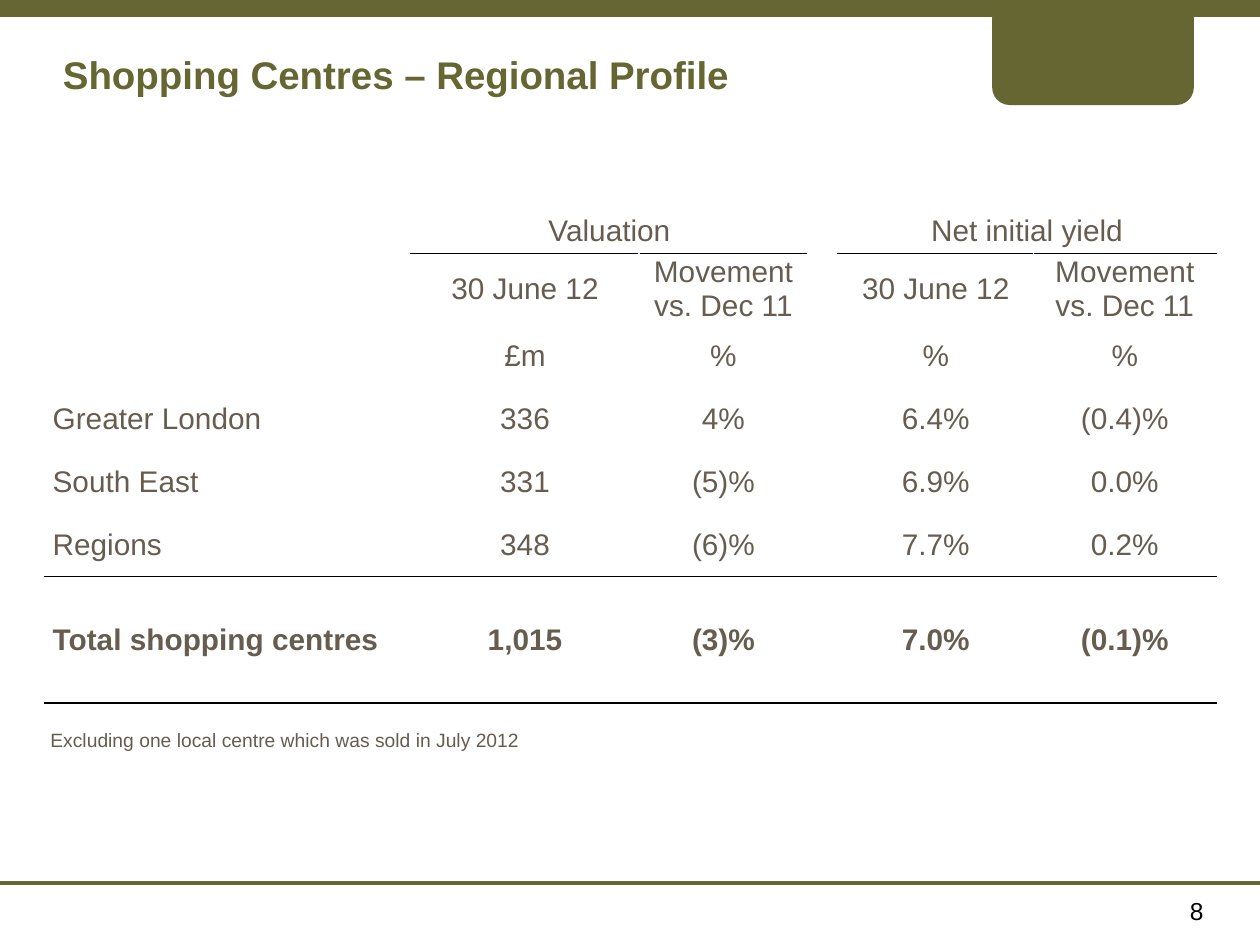
from lxml.etree import SubElement
from pptx import Presentation
from pptx.dml.color import RGBColor
from pptx.enum.shapes import MSO_CONNECTOR, MSO_SHAPE
from pptx.enum.text import MSO_ANCHOR, PP_ALIGN
from pptx.oxml.ns import qn
from pptx.util import Pt

OLIVE, TAUPE, BLACK = "666633", "665C4F", "000000"
COLUMN_WIDTHS = [209.5, 130.3, 96.5, 17.3, 111.6, 104.4]
ROW_HEIGHTS = [26, 37.4, 36, 36, 36, 36, 72]
GAP_COLUMN = 3
REGIONAL_PROFILE = [
    ["", "Valuation", "", "", "Net initial yield", ""],
    ["", "30 June 12", "Movement vs. Dec 11", "", "30 June 12", "Movement vs. Dec 11"],
    ["", "£m", "%", "", "%", "%"],
    ["Greater London", "336", "4%", "", "6.4%", "(0.4)%"],
    ["South East", "331", "(5)%", "", "6.9%", "0.0%"],
    ["Regions", "348", "(6)%", "", "7.7%", "0.2%"],
    ["Total shopping centres", "1,015", "(3)%", "", "7.0%", "(0.1)%"],
]


def rgb(value):
    return RGBColor.from_string(value)


def style(paragraph, size, color, bold=False, align=PP_ALIGN.LEFT):
    paragraph.alignment = align
    font = paragraph.font
    font.name, font.size, font.bold = "Arial", Pt(size), bold
    font.color.rgb = rgb(color)


def add_rule(slide, y, weight):
    rule = slide.shapes.add_connector(MSO_CONNECTOR.STRAIGHT, 0, Pt(y), Pt(720), Pt(y))
    rule.line.color.rgb = rgb(OLIVE)
    rule.line.width = Pt(weight)
    SubElement(rule._element.spPr, qn("a:effectLst"))


def add_corner_tab(slide):
    tab = slide.shapes.add_shape(
        MSO_SHAPE.ROUNDED_RECTANGLE, Pt(567), 0, Pt(115.2), Pt(60))
    tab.shadow.inherit = False
    tab.fill.solid()
    tab.fill.fore_color.rgb = rgb(OLIVE)
    tab.line.fill.background()


def add_text(slide, text, box, margins, size, color, anchor=MSO_ANCHOR.TOP, **looks):
    frame = slide.shapes.add_textbox(*map(Pt, box)).text_frame
    frame.word_wrap = True
    frame.vertical_anchor = anchor
    (frame.margin_left, frame.margin_top,
     frame.margin_right, frame.margin_bottom) = map(Pt, margins)
    frame.text = text
    style(frame.paragraphs[0], size, color, **looks)


def add_border(cell, side, weight):
    properties = cell._tc.get_or_add_tcPr()
    border = properties.makeelement(qn(f"a:{side}"), {"w": str(Pt(weight))})
    fill = SubElement(border, qn("a:solidFill"))
    SubElement(fill, qn("a:srgbClr"), val=BLACK)
    position = sum(child.tag == qn("a:lnT") for child in properties)
    properties.insert(position, border)


def rule_below(table, row, columns, weight):
    for column in columns:
        add_border(table.cell(row, column), "lnB", weight)
        if row + 1 < len(ROW_HEIGHTS):
            add_border(table.cell(row + 1, column), "lnT", weight)


def fill_cell(cell, text, is_label, is_total):
    cell.fill.background()
    cell.vertical_anchor = MSO_ANCHOR.MIDDLE
    cell.margin_left = Pt(4.7 if is_label else 0)
    cell.margin_right = cell.margin_top = cell.margin_bottom = 0
    cell.text = text
    style(cell.text_frame.paragraphs[0], 17, TAUPE, bold=is_total,
          align=PP_ALIGN.LEFT if is_label else PP_ALIGN.CENTER)


def add_profile_table(slide):
    table = slide.shapes.add_table(
        len(ROW_HEIGHTS), len(COLUMN_WIDTHS), Pt(25.4), Pt(118.8),
        Pt(sum(COLUMN_WIDTHS)), Pt(sum(ROW_HEIGHTS))).table
    table.first_row = table.horz_banding = False
    for column, width in zip(table.columns, COLUMN_WIDTHS):
        column.width = Pt(width)
    for row, height in zip(table.rows, ROW_HEIGHTS):
        row.height = Pt(height)
    total_row = len(ROW_HEIGHTS) - 1
    for r, values in enumerate(REGIONAL_PROFILE):
        for c, value in enumerate(values):
            fill_cell(table.cell(r, c), value, c == 0, r == total_row)
    for first in (1, GAP_COLUMN + 1):
        table.cell(0, first).merge(table.cell(0, first + 1))
        rule_below(table, 0, (first, first + 1), 1)
    all_columns = range(len(COLUMN_WIDTHS))
    rule_below(table, total_row - 1, all_columns, 0.75)
    rule_below(table, total_row, all_columns, 1)


def main():
    deck = Presentation()
    deck.slide_width, deck.slide_height = Pt(720), Pt(540)
    slide = deck.slides.add_slide(deck.slide_layouts[6])
    add_rule(slide, 504.7, 2)
    add_corner_tab(slide)
    add_rule(slide, 4.5, 10)
    add_text(slide, "8", (597.6, 508.3, 97.2, 25.9), (7.2, 3.6, 7.2, 3.6),
             14, BLACK, align=PP_ALIGN.RIGHT)
    add_text(slide, "Shopping Centres – Regional Profile", (36, 21.6, 522.7, 41.8),
             (0, 0, 2.9, 0), 22, OLIVE, anchor=MSO_ANCHOR.MIDDLE, bold=True)
    add_profile_table(slide)
    add_text(slide, "Excluding one local centre which was sold in July 2012",
             (24.5, 411.8, 306.7, 28.1), (4.3, 4.3, 7.2, 4.3), 11, TAUPE)
    deck.save("out.pptx")


if __name__ == "__main__":
    main()
